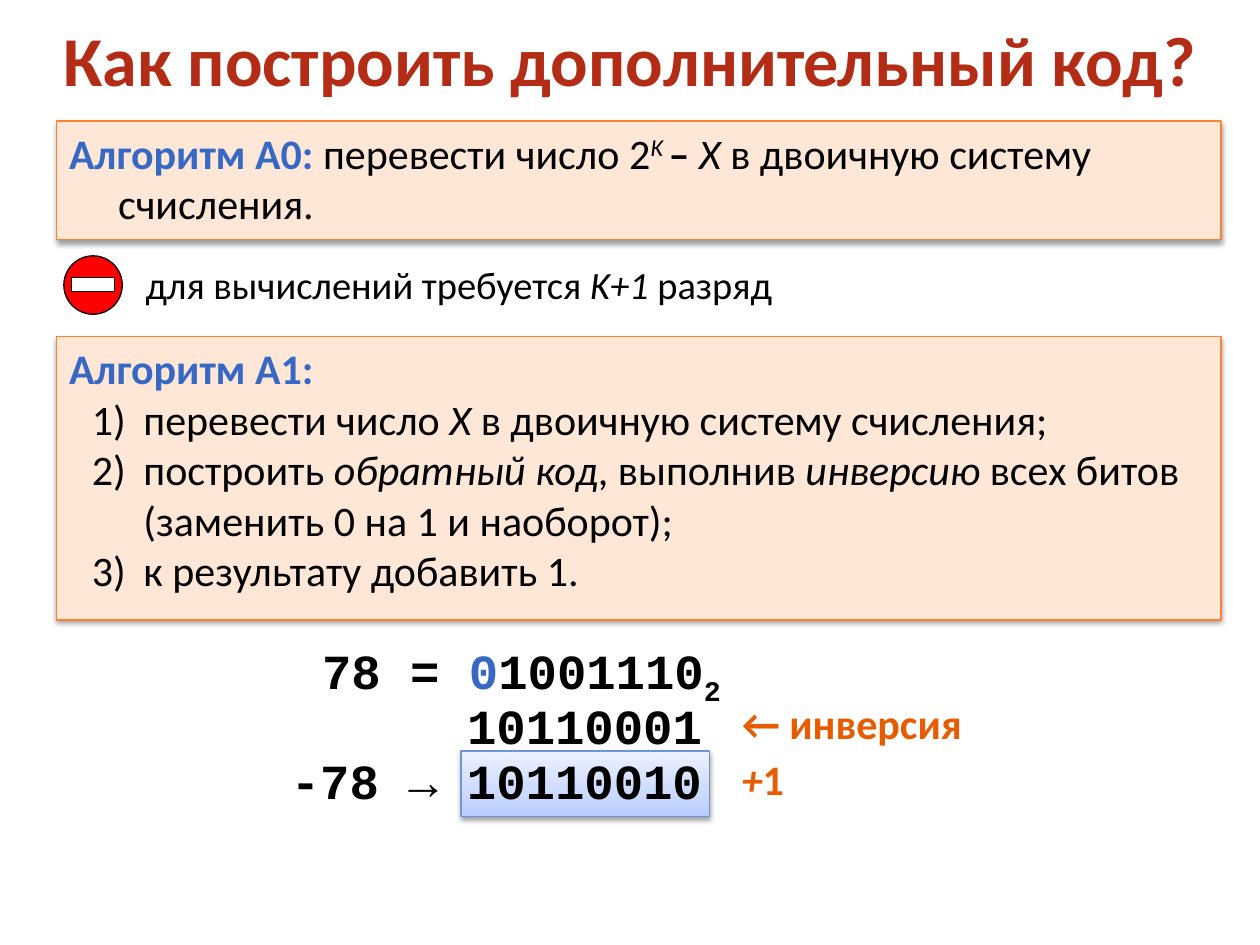
from copy import deepcopy

from lxml import etree
from pptx import Presentation
from pptx.dml.color import RGBColor
from pptx.enum.shapes import MSO_SHAPE
from pptx.enum.text import MSO_ANCHOR, MSO_AUTO_SIZE, PP_ALIGN
from pptx.oxml.ns import qn
from pptx.util import Pt

RECTANGLE, OVAL = MSO_SHAPE.RECTANGLE, MSO_SHAPE.OVAL
TOP, MIDDLE = MSO_ANCHOR.TOP, MSO_ANCHOR.MIDDLE
LEFT, CENTER, RIGHT = PP_ALIGN.LEFT, PP_ALIGN.CENTER, PP_ALIGN.RIGHT
FIT, FIXED = MSO_AUTO_SIZE.SHAPE_TO_FIT_TEXT, MSO_AUTO_SIZE.NONE

BLUE, BLACK, WHITE, ORANGE = "3668C4", "000000", "FFFFFF", "E75C01"
BOLD, ITALIC = {"bold": True}, {"italic": True}
HEADING = {"color": BLUE, "bold": True}
TITLE = {"name": "Calibri", "size": Pt(40), "color": "B32C16", "bold": True}
BODY = {"name": "Calibri", "size": Pt(24), "color": BLACK}
REMARK = BODY | {"size": Pt(22)}
CODE = {"name": "Courier New", "size": Pt(28), "color": BLACK, "bold": True}
STEP_NOTE = BODY | {"color": ORANGE, "bold": True}


def rgb(hex_color):
    """Turn a hex string into a colour."""
    return RGBColor.from_string(hex_color)


def add_runs(paragraph, runs, base):
    """Write (text, changes) runs over a base format."""
    for text, changes in runs:
        run = paragraph.add_run()
        run.text = text
        for key, value in (base | changes).items():
            if key == "color":
                run.font.color.rgb = rgb(value)
            elif key == "baseline":
                run.font._element.set("baseline", str(value))
            else:
                setattr(run.font, key, value)


def indent(paragraph, margin, first, numbered=False):
    """Set a hanging indent in points, with an optional 1) number."""
    properties = paragraph._p.get_or_add_pPr()
    properties.set("marL", str(Pt(margin)))
    properties.set("indent", str(Pt(first)))
    if numbered:
        etree.SubElement(properties, qn("a:buFont"), typeface="+mj-lt")
        etree.SubElement(properties, qn("a:buAutoNum"), type="arabicParenR")


def add_label(slide, box, runs, base, align=LEFT, anchor=TOP, wrap=True, fit=FIT):
    """Place one line of text in a box."""
    label = slide.shapes.add_textbox(*map(Pt, box))
    frame_format = {"word_wrap": wrap, "auto_size": fit, "vertical_anchor": anchor}
    for key, value in frame_format.items():
        setattr(label.text_frame, key, value)
    paragraph = label.text_frame.paragraphs[0]
    paragraph.alignment = align
    add_runs(paragraph, runs, base)


def add_figure(shapes, kind, box, line, fill=None):
    """Place a preset shape with a thin outline."""
    figure = shapes.add_shape(kind, *map(Pt, box))
    figure.shadow.inherit = False
    figure.line.color.rgb = rgb(line)
    figure.line.width = Pt(0.75)
    if fill:
        figure.fill.solid()
        figure.fill.fore_color.rgb = rgb(fill)
    return figure


def add_shadow(figure):
    """Drop a soft shadow below a shape."""
    effects = figure._element.spPr.find(qn("a:effectLst"))
    shadow = etree.SubElement(
        effects, qn("a:outerShdw"), blurRad=str(Pt(3.1)), dist=str(Pt(1.6)),
        dir="5400000", rotWithShape="0")
    color = etree.SubElement(shadow, qn("a:srgbClr"), val=BLACK)
    etree.SubElement(color, qn("a:alpha"), val="38000")


def add_algorithm(slide, box, intro, steps=()):
    """Place an algorithm panel with an intro and numbered steps."""
    panel = add_figure(slide.shapes, RECTANGLE, box, "FD8231", "FFE7D7")
    add_shadow(panel)
    frame = panel.text_frame
    frame.word_wrap = True
    frame.vertical_anchor = TOP
    paragraph = frame.paragraphs[0]
    paragraph.alignment = LEFT
    indent(paragraph, 28, -28)
    add_runs(paragraph, intro, BODY)
    for step in steps:
        paragraph = frame.add_paragraph()
        paragraph.alignment = LEFT
        indent(paragraph, 42.5, -29.5, numbered=True)
        add_runs(paragraph, step, BODY)


def add_drawback(slide, left, top):
    """Place the no-entry sign and its remark."""
    sign = slide.shapes.add_group_shape()
    add_figure(sign.shapes, OVAL, (left, top, 33.4, 33.4), BLACK, "FF0000")
    add_figure(sign.shapes, RECTANGLE, (left + 4.5, top + 12.5, 24.4, 7.9), BLACK, WHITE)
    remark = [("для вычислений требуется ", {}), ("K+1 ", ITALIC), ("разряд", {})]
    add_label(slide, (left + 39.6, top - 0.7, 520, 34), remark, REMARK)


def add_result_frame(slide, box):
    """Place the gradient frame behind the result."""
    frame = add_figure(slide.shapes, RECTANGLE, box, "7094D7")
    add_shadow(frame)
    frame.fill.gradient()
    frame.fill.gradient_angle = 90
    stop_list = frame._element.spPr.find(qn("a:gradFill")).find(qn("a:gsLst"))
    stop_list.append(deepcopy(stop_list[-1]))
    colors = [(0, "B8CCFF"), (0.35, "CCDAFF"), (1, "EBF1FF")]
    for stop, (position, color) in zip(frame.fill.gradient_stops, colors):
        stop.position = position
        stop.color.rgb = rgb(color)


def add_example(slide, left, top):
    """Place the worked example for 78."""
    add_result_frame(slide, (left + 125.3, top + 67, 141.8, 37.4))
    number = [("78 = ", {}), ("0", {"color": BLUE}), ("1001110", {}),
              ("2", {"baseline": -25000})]
    lines = [(35.3, 0, 245.5, number, False),
             (120.2, 31.7, 149.8, [("10110001", {})], False),
             (0, 63.4, 270, [("-78 → 10110010", {})], True)]
    for x, y, width, runs, wrap in lines:
        add_label(slide, (left + x, top + y, width, 41), runs, CODE, RIGHT, wrap=wrap)
    notes = [(33.1, 154, [("← инверсия", {})], True),
             (64.8, 38.9, [("+", ITALIC), ("1", {})], False)]
    for y, width, runs, wrap in notes:
        add_label(slide, (left + 278.6, top + y, width, 36.4), runs, STEP_NOTE, wrap=wrap)


def main():
    """Build the slide and save it."""
    deck = Presentation()
    deck.slide_width, deck.slide_height = Pt(720), Pt(540)
    slide = deck.slides.add_slide(deck.slide_layouts[6])
    add_label(slide, (0, -11.5, 720, 90), [("Как построить дополнительный код?", {})],
              TITLE, CENTER, MIDDLE, fit=FIXED)
    add_algorithm(slide, (32.4, 69.1, 665.3, 67.7), [
        ("Алгоритм А0: ", HEADING), ("перевести число 2", {}),
        ("K ", ITALIC | {"baseline": 30000}), ("– ", BOLD), ("X ", ITALIC),
        ("в двоичную систему счисления.", {})])
    add_drawback(slide, 36.5, 146.2)
    add_algorithm(slide, (32.4, 192.4, 665.3, 162), [("Алгоритм А1:", HEADING)], [
        [("перевести число ", {}), ("X ", ITALIC), ("в двоичную систему счисления;", {})],
        [("построить ", {}), ("обратный код", ITALIC), (", выполнив ", {}),
         ("инверсию", ITALIC), (" всех битов (заменить 0 на 1 и наоборот);", {})],
        [("к результату добавить 1.", {})]])
    add_example(slide, 138.2, 362.2)
    deck.save("out.pptx")


if __name__ == "__main__":
    main()
